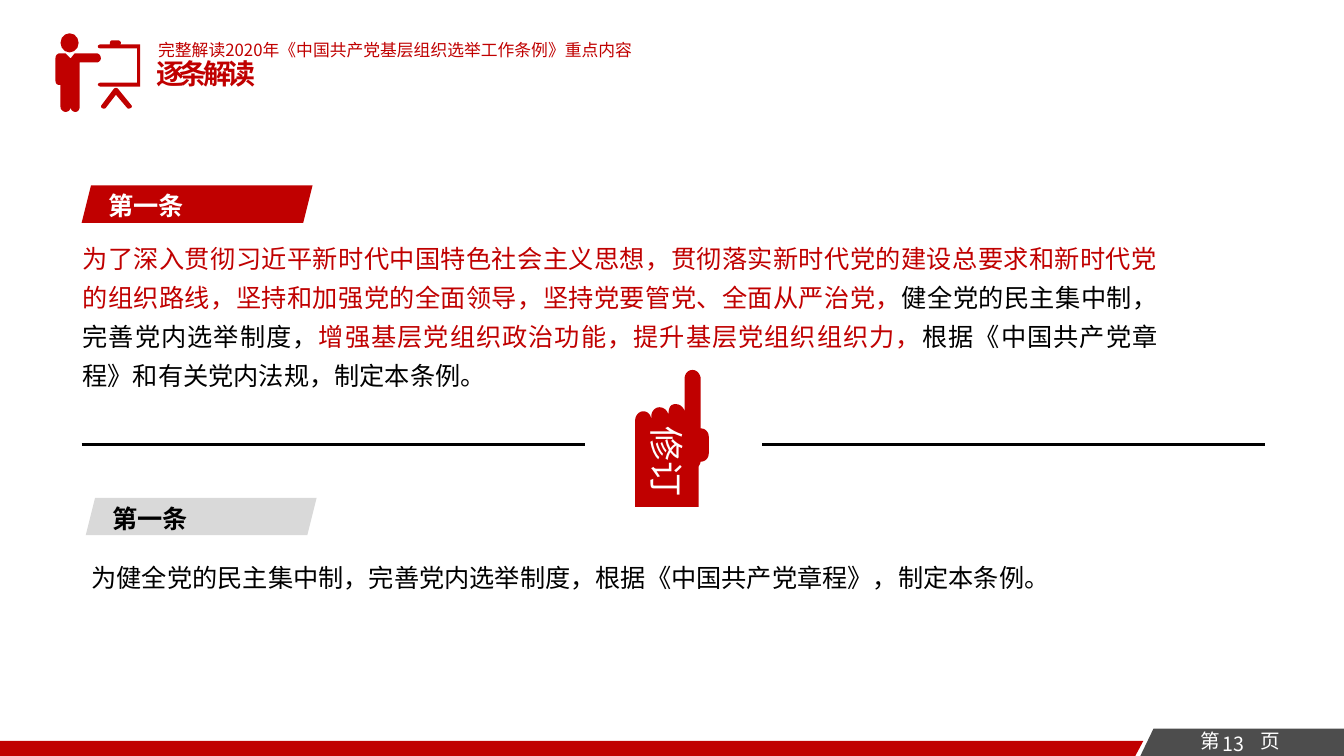
from lxml import etree
from pptx import Presentation
from pptx.dml.color import RGBColor
from pptx.enum.shapes import MSO_CONNECTOR, MSO_SHAPE
from pptx.enum.text import MSO_ANCHOR, PP_ALIGN
from pptx.oxml.ns import qn
from pptx.util import Inches, Pt

LEFT, CENTER, JUSTIFY = PP_ALIGN.LEFT, PP_ALIGN.CENTER, PP_ALIGN.JUSTIFY
TOP, MIDDLE = MSO_ANCHOR.TOP, MSO_ANCHOR.MIDDLE


class Theme:
    font = "Noto Sans CJK SC"
    red, dark, grey = "C00000", "4D4D4D", "D9D9D9"
    black, white = "000000", "FFFFFF"
    small, page, body, title, stamp = 12, 14, 18, 20, 25


W, H = 13.33, 7.5
SUBTITLE = "完整解读2020年《中国共产党基层组织选举工作条例》重点内容"
TITLE = "逐条解读"
STAMP = "修订"
PAGE_LABEL, PAGE_NUMBER = "第\t页", "13"
# label, left, top, fill, text colour
TAGS = [
    ("第一条", 0.81, 1.84, Theme.red, Theme.white),
    ("第一条", 0.85, 4.94, Theme.grey, Theme.black),
]
NEW_ARTICLE = [
    ("为了深入贯彻习近平新时代中国特色社会主义思想，贯彻落实新时代党的建设总要求和"
     "新时代党的组织路线，坚持和加强党的全面领导，坚持党要管党、全面从严治党，", Theme.red),
    ("健全党的民主集中制，完善党内选举制度，", Theme.black),
    ("增强基层党组织政治功能，提升基层党组织组织力，", Theme.red),
    ("根据《中国共产党章程》和有关党内法规，制定本条例。", Theme.black),
]
OLD_ARTICLE = [("为健全党的民主集中制，完善党内选举制度，根据《中国共产党章程》，制定本条例。",
                Theme.black)]

# Outlines in inches: a pair is a straight step, six numbers are a Bézier step
FOOTER_BAR = [(0, H), (11.26, H), (11.34, 7.35), (0, 7.35)]
PAGE_TAB = [(11.44, 7.23), (11.31, H), (W, H), (W, 7.23)]
PRESENTER = [
    (0.96, 0.53), (0.74, 0.53), (0.7, 0.58), (0.65, 0.53), (0.59, 0.53),
    (0.57, 0.53, 0.55, 0.55, 0.55, 0.58), (0.55, 0.8),
    (0.55, 0.83, 0.57, 0.85, 0.6, 0.84), (0.6, 1.06),
    (0.6, 1.09, 0.63, 1.11, 0.65, 1.11), (0.68, 1.11, 0.7, 1.09, 0.7, 1.06),
    (0.7, 1.09, 0.72, 1.11, 0.75, 1.11), (0.77, 1.11, 0.79, 1.09, 0.79, 1.06),
    (0.79, 0.62), (0.96, 0.62),
    (0.98, 0.62, 1, 0.6, 1, 0.58), (1, 0.55, 0.98, 0.53, 0.96, 0.53),
]
BOARD = [
    (1.39, 0.44), (1.19, 0.44), (1.2, 0.43), (1.2, 0.41, 1.18, 0.4, 1.17, 0.4),
    (1.12, 0.4), (1.1, 0.4, 1.09, 0.41, 1.09, 0.43), (1.09, 0.44), (1, 0.44),
    (0.99, 0.44, 0.97, 0.45, 0.97, 0.46), (0.97, 0.48, 0.99, 0.48, 1, 0.48),
    (1.36, 0.48), (1.36, 0.82), (1, 0.82), (0.99, 0.82, 0.97, 0.83, 0.97, 0.84),
    (0.97, 0.85, 0.99, 0.86, 1, 0.86), (1.39, 0.86),
]
EASEL_LEGS = [
    (1.3, 1.04), (1.17, 0.88), (1.16, 0.87, 1.14, 0.87, 1.13, 0.88), (1.01, 1.04),
    (1, 1.05, 1, 1.06, 1.01, 1.07), (1.02, 1.08, 1.04, 1.08, 1.05, 1.07),
    (1.15, 0.94), (1.26, 1.07), (1.27, 1.08, 1.28, 1.08, 1.3, 1.07),
    (1.31, 1.06, 1.31, 1.05, 1.3, 1.04),
]
HAND = [
    (6.38, 4.08), (6.43, 4.08, 6.46, 4.12, 6.46, 4.17), (6.46, 4.13),
    (6.46, 4.08, 6.5, 4.04, 6.54, 4.04), (6.59, 4.04, 6.63, 4.08, 6.63, 4.13),
    (6.63, 4.08, 6.63, 4, 6.71, 4.01), (6.75, 4.01, 6.79, 4.05, 6.79, 4.09),
    (6.79, 3.76), (6.79, 3.71, 6.82, 3.67, 6.87, 3.67),
    (6.91, 3.67, 6.95, 3.71, 6.95, 3.76), (6.95, 4.25),
    (7, 4.25, 7.03, 4.29, 7.03, 4.33), (7.03, 4.5),
    (7.03, 4.54, 7, 4.58, 6.95, 4.58), (6.94, 4.63, 6.9, 4.66, 6.85, 4.66),
    (6.4, 4.66), (6.35, 4.66, 6.3, 4.61, 6.3, 4.56), (6.3, 4.17),
    (6.3, 4.12, 6.34, 4.08, 6.38, 4.08),
]


def paint(sp, color):
    sp.shadow.inherit = False
    sp.fill.solid()
    sp.fill.fore_color.rgb = RGBColor.from_string(color)
    sp.line.fill.background()


def flatten(outline, steps=8):
    """Turn an outline of straight and Bézier steps into plain points."""
    points = [outline[0]]
    for step in outline[1:]:
        if len(step) == 2:
            points.append(step)
            continue
        corners = [points[-1], step[:2], step[2:4], step[4:]]
        for i in range(1, steps + 1):
            t = i / steps
            weights = ((1 - t) ** 3, 3 * t * (1 - t) ** 2, 3 * t * t * (1 - t), t ** 3)
            points.append(tuple(sum(w * c[axis] for w, c in zip(weights, corners))
                                for axis in (0, 1)))
    return points


def add_outline(slide, outline, color):
    points = [(Inches(x), Inches(y)) for x, y in flatten(outline)]
    builder = slide.shapes.build_freeform(*points[0], scale=1.0)
    builder.add_line_segments(points[1:], close=True)
    paint(builder.convert_to_shape(), color)


def add_block(slide, kind, box, color):
    paint(slide.shapes.add_shape(kind, *map(Inches, box)), color)


def add_text(slide, box, runs, size, align=LEFT, anchor=TOP, bold=False, wrap=True,
             inset=True, spacing=None, tracking=None, tab=None):
    """Add a one-paragraph text box; runs are (text, colour) pairs."""
    sp = slide.shapes.add_textbox(*map(Inches, box))
    tf = sp.text_frame
    tf.word_wrap, tf.vertical_anchor = wrap, anchor
    if not inset:
        tf.margin_left = tf.margin_right = tf.margin_top = tf.margin_bottom = 0
    p = tf.paragraphs[0]
    p.alignment = align
    if spacing:
        p.line_spacing = spacing
    if tab:
        tabs = etree.SubElement(p._p.get_or_add_pPr(), qn("a:tabLst"))
        etree.SubElement(tabs, qn("a:tab"), pos=str(Inches(tab)), algn="l")
    p.font.size, p.font.bold, p.font.name = Pt(size), bold, Theme.font
    p.font.color.rgb = RGBColor.from_string(runs[0][1])
    props = p._p.pPr.find(qn("a:defRPr"))
    etree.SubElement(props, qn("a:ea"), typeface=Theme.font)
    if tracking:
        props.set("spc", str(tracking * 100))
    for text, color in runs:
        r = p.add_run()
        r.text = text
        if len(runs) > 1:
            r.font.color.rgb = RGBColor.from_string(color)
    return sp


def add_rule(slide, x, y, length):
    line = slide.shapes.add_connector(MSO_CONNECTOR.STRAIGHT, Inches(x), Inches(y),
                                      Inches(x + length), Inches(y))
    line.line.color.rgb = RGBColor.from_string(Theme.black)
    line.line.width = Pt(1.5)
    etree.SubElement(line._element.spPr, qn("a:effectLst"))


def main():
    prs = Presentation()
    prs.slide_width, prs.slide_height = Inches(W), Inches(H)
    slide = prs.slides.add_slide(prs.slide_layouts[6])

    add_outline(slide, FOOTER_BAR, Theme.red)
    add_outline(slide, PAGE_TAB, Theme.dark)
    add_text(slide, (11.91, 7.23, 1.16, 0.24), [(PAGE_LABEL, Theme.white)], Theme.page,
             inset=False, tab=0.59)
    add_text(slide, (11.37, 7.21, 1.73, 0.34), [(PAGE_NUMBER, Theme.white)], Theme.page,
             align=CENTER)

    add_block(slide, MSO_SHAPE.OVAL, (0.6, 0.33, 0.18, 0.19), Theme.red)
    for outline in (PRESENTER, BOARD, EASEL_LEGS):
        add_outline(slide, outline, Theme.red)
    add_text(slide, (1.45, 0.51, 1.45, 0.44), [(TITLE, Theme.red)], Theme.title,
             align=JUSTIFY, bold=True, tracking=-3)
    add_text(slide, (1.47, 0.22, 7.69, 0.55), [(SUBTITLE, Theme.red)], Theme.small,
             anchor=MIDDLE)

    for label, x, y, fill, color in TAGS:
        add_block(slide, MSO_SHAPE.PARALLELOGRAM, (x, y, 2.29, 0.37), fill)
        add_text(slide, (x + 0.15, y, 0.98, 0.4), [(label, color)], Theme.body,
                 align=CENTER, bold=True, wrap=False)
    for box, runs in (((0.72, 2.27, 10.86, 1.68), NEW_ARTICLE),
                      ((0.81, 5.44, 11.11, 0.46), OLD_ARTICLE)):
        add_text(slide, box, runs, Theme.body, align=JUSTIFY, spacing=1.3)

    for x in (0.81, 7.56):
        add_rule(slide, x, 4.41, 4.99)
    add_outline(slide, HAND, Theme.red)
    add_block(slide, MSO_SHAPE.RECTANGLE, (6.3, 4.5, 0.63, 0.53), Theme.red)
    stamp = add_text(slide, (6.17, 4.32, 0.9, 0.52), [(STAMP, Theme.white)], Theme.stamp,
                     wrap=False)
    stamp.rotation = 90

    prs.save("out.pptx")


if __name__ == "__main__":
    main()
